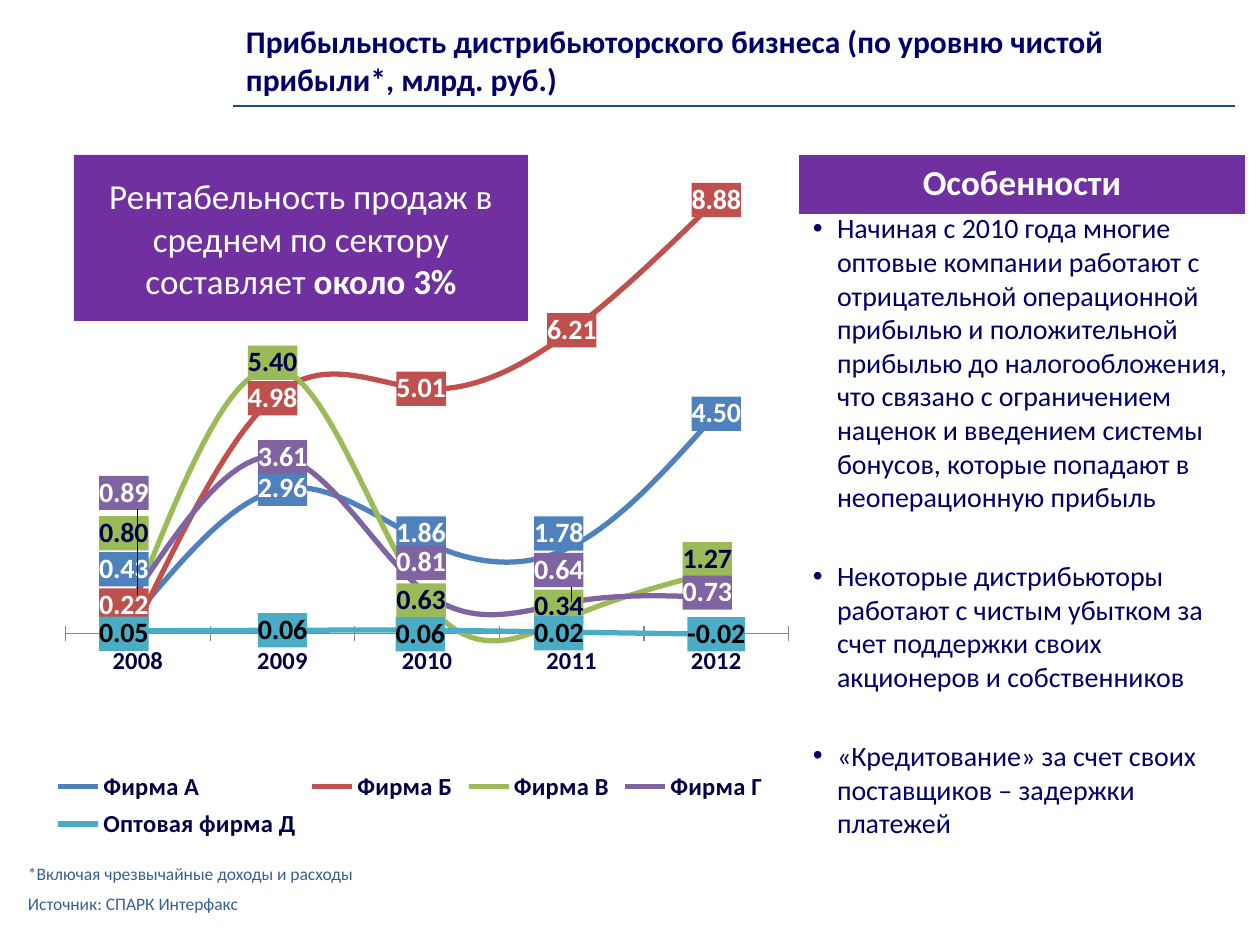
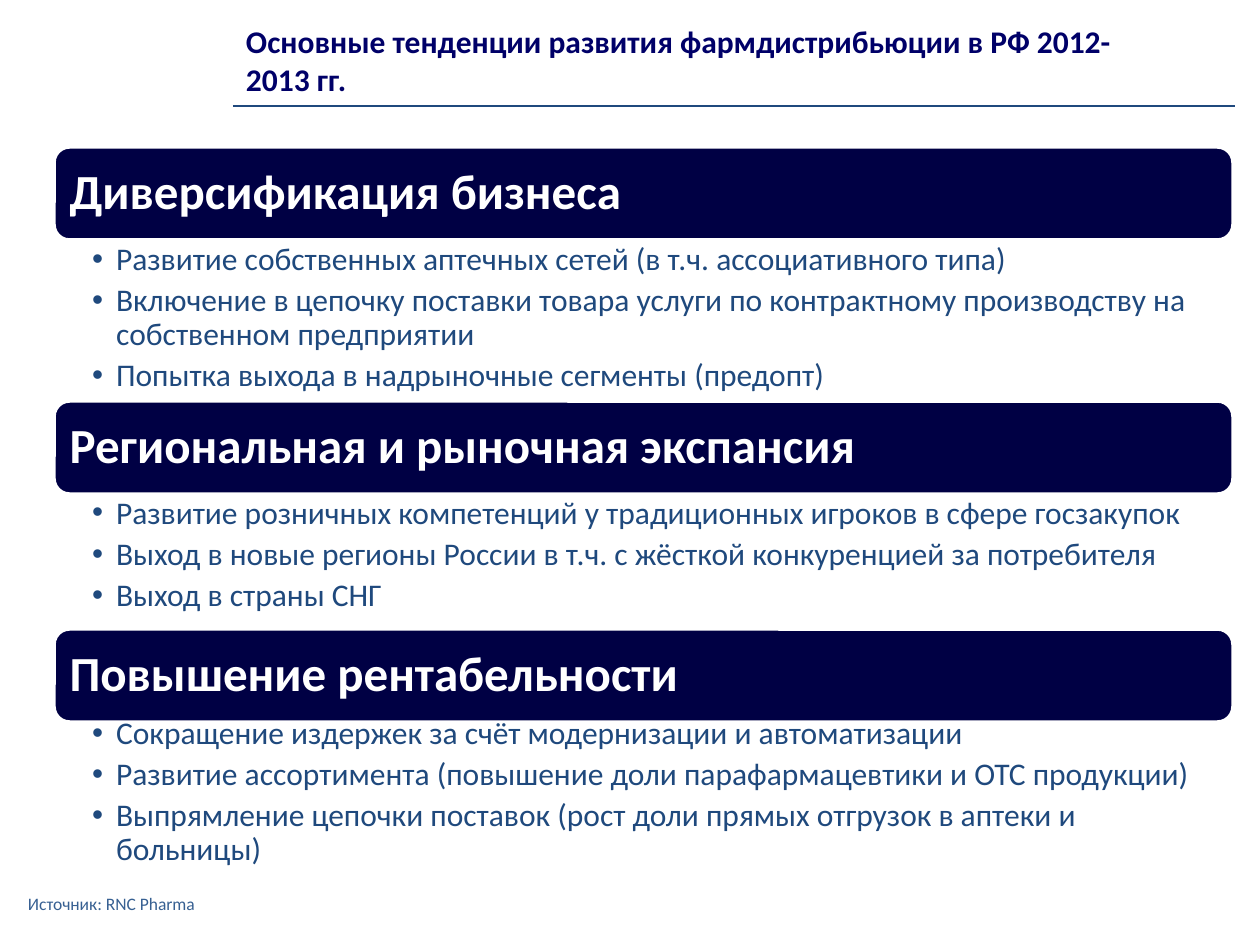
import copy
import collections

import lxml.etree
import pptx
import pptx.chart.data
import pptx.dml.color
import pptx.enum.chart
import pptx.enum.shapes
import pptx.enum.text
import pptx.oxml
import pptx.oxml.ns
import pptx.util

PX = 914400 / 126
FONT = "Calibri"
WHITE, NAVY, TITLE_BLUE, PANEL_BLUE = "FFFFFF", "000044", "000068", "000066"
RULE_BLUE, NOTE_BLUE, PURPLE, AXIS_GREY = "1F497D", "376092", "7030A0", "878787"
MIDDLE = pptx.enum.text.MSO_ANCHOR.MIDDLE
CENTER = pptx.enum.text.PP_ALIGN.CENTER
SHAPES = pptx.enum.shapes.MSO_SHAPE
qn = pptx.oxml.ns.qn

Box = collections.namedtuple("Box", "left top width height")
Line = collections.namedtuple("Line", "name values colour label_colour shifts")

YEARS = ["2008", "2009", "2010", "2011", "2012"]
# shifts: year index -> label offset from its point, in px
PROFITS = [
    Line("Фирма А", (0.43, 2.96, 1.86, 1.78, 4.5), "4F81BD", WHITE,
         {0: (-14, -43), 2: (-6, -9), 3: (-13, -13)}),
    Line("Фирма Б", (0.22, 4.98, 5.01, 6.21, 8.88), "C0504D", WHITE,
         {0: (-14, -17), 1: (-10, 8), 2: (-6, 0)}),
    Line("Фирма В", (0.8, 5.4, 0.63, 0.34, 1.27), "9BBB59", NAVY,
         {0: (-14, -61), 1: (-10, -7), 2: (-6, -2), 3: (-13, -10), 4: (-9, -12)}),
    Line("Фирма Г", (0.89, 3.61, 0.81, 0.64, 0.73), "8064A2", WHITE,
         {0: (-14, -97), 2: (-6, -31), 3: (-13, -32), 4: (-9, -5)}),
    Line("Оптовая фирма Д", (0.05, 0.06, 0.06, 0.02, -0.02), "4BACC6", "000000",
         {0: (-14, 3), 2: (-7, 4), 3: (-13, 1)}),
]
FEATURES = [
    "Начиная с 2010 года многие оптовые компании работают с отрицательной "
    "операционной прибылью и положительной прибылью до налогообложения, что "
    "связано с ограничением наценок и введением системы бонусов, которые "
    "попадают в неоперационную прибыль",
    "Некоторые дистрибьюторы работают с чистым убытком за счет поддержки своих "
    "акционеров и собственников",
    "«Кредитование» за счет своих поставщиков – задержки платежей",
]
# heading, top, top of the list, height of the list, points
TRENDS = [
    ("Диверсификация бизнеса", 147, 239, 161, [
        "Развитие собственных аптечных сетей (в т.ч. ассоциативного типа)",
        "Включение в цепочку поставки товара услуги по контрактному производству "
        "на собственном предприятии",
        "Попытка выхода в надрыночные сегменты (предопт)"]),
    ("Региональная и рыночная экспансия", 401, 493, 129, [
        "Развитие розничных компетенций у традиционных игроков в сфере госзакупок",
        "Выход в новые регионы России в т.ч. с жёсткой конкуренцией за потребителя",
        "Выход в страны СНГ"]),
    ("Повышение рентабельности", 629, 713, 164, [
        "Сокращение издержек за счёт модернизации и автоматизации",
        "Развитие ассортимента (повышение доли парафармацевтики и ОТС продукции)",
        "Выпрямление цепочки поставок (рост доли прямых отгрузок в аптеки и больницы)"]),
]


def px(length):
    return round(length * PX)


def rgb(colour):
    return pptx.dml.color.RGBColor.from_string(colour)


def set_font(font, size, colour, bold=False):
    font.name, font.size, font.bold = FONT, pptx.util.Pt(size), bold
    font.color.rgb = rgb(colour)


def add_bullet(para, indent):
    properties = para._p.get_or_add_pPr()
    properties.set("marL", str(px(indent)))
    properties.set("indent", str(-px(indent)))
    lxml.etree.SubElement(properties, qn("a:buFont"), typeface="Arial")
    lxml.etree.SubElement(properties, qn("a:buChar"), char="•")


def write(shape, paragraphs, size, colour, bold=False, align=None, anchor=None,
          insets=(13, 6, 13, 6), bullet=False, spacing=None, after=0):
    """Fill a shape; a paragraph is a string or a list of (text, bold) spans."""
    frame = shape.text_frame
    frame.word_wrap = True
    frame.vertical_anchor = anchor or pptx.enum.text.MSO_ANCHOR.TOP
    (frame.margin_left, frame.margin_top,
     frame.margin_right, frame.margin_bottom) = map(px, insets)
    for index, spans in enumerate(paragraphs):
        para = frame.add_paragraph() if index else frame.paragraphs[0]
        para.alignment = align or pptx.enum.text.PP_ALIGN.LEFT
        if spacing:
            para.line_spacing = spacing
        para.space_after = pptx.util.Pt(after)
        if bullet:
            add_bullet(para, 24)
        for text, span_bold in [(spans, bold)] if isinstance(spans, str) else spans:
            span = para.add_run()
            span.text = text
            set_font(span.font, size, colour, span_bold)


def add_text(page, box, paragraphs, size, colour, **options):
    shape = page.shapes.add_textbox(*map(px, box))
    write(shape, paragraphs, size, colour, **options)


def add_filled(page, kind, box, fill):
    shape = page.shapes.add_shape(kind, *map(px, box))
    shape.shadow.inherit = False
    shape.fill.solid()
    shape.fill.fore_color.rgb = rgb(fill)
    shape.line.fill.background()
    return shape


def add_page(deck, title, notes):
    """Start a page with its title, rule and notes stacked up from the bottom."""
    page = deck.slides.add_slide(deck.slide_layouts[6])
    rule = page.shapes.add_connector(
        pptx.enum.shapes.MSO_CONNECTOR.STRAIGHT, px(233), px(106), px(1235), px(106))
    rule.line.color.rgb = rgb(RULE_BLUE)
    rule.line.width = pptx.util.Pt(1.5)
    lxml.etree.SubElement(rule._element.spPr, qn("a:effectLst"))
    add_text(page, Box(233, 16, 903, 89), [title], 18, TITLE_BLUE, bold=True)
    for index, note in enumerate(notes):
        add_text(page, Box(15, 879 - 30 * index, 399, 50), [note], 10, NOTE_BLUE,
                 anchor=MIDDLE)
    return page


def manual_layout(**values):
    layout = pptx.oxml.parse_xml(f"<c:layout {pptx.oxml.ns.nsdecls('c')}><c:manualLayout/></c:layout>")
    for name, value in values.items():
        lxml.etree.SubElement(layout[0], qn(f"c:{name}"), val=str(value))
    return layout


def label_series(series, line, box):
    labels = series.data_labels
    labels.show_value = True
    labels.number_format, labels.number_format_is_linked = "#,##0.00", False
    labels.position = pptx.enum.chart.XL_LABEL_POSITION.CENTER
    set_font(labels.font, 16, line.label_colour, True)
    element = series._element.find(qn("c:dLbls"))
    fill = pptx.oxml.parse_xml(
        f"<c:spPr {pptx.oxml.ns.nsdecls('c', 'a')}><a:solidFill>"
        f'<a:srgbClr val="{line.colour}"/></a:solidFill></c:spPr>')
    element.find(qn("c:txPr")).addprevious(fill)
    shared = [element.find(qn(f"c:{tag}")) for tag in ("txPr", "spPr", "numFmt")]
    for index, (right, down) in line.shifts.items():
        series.points[index].data_label.position = pptx.enum.chart.XL_LABEL_POSITION.CENTER
        label = next(item for item in element.findall(qn("c:dLbl"))
                     if item.find(qn("c:idx")).get("val") == str(index))
        for old in label.findall(qn("c:spPr")) + label.findall(qn("c:txPr")):
            label.remove(old)
        start = label.find(qn("c:idx"))
        for part in shared:
            start.addnext(copy.deepcopy(part))
        start.addnext(manual_layout(x=round(right / box.width, 4),
                                    y=round(down / box.height, 4)))


def add_profit_chart(page, box):
    data = pptx.chart.data.CategoryChartData()
    data.categories = YEARS
    for line in PROFITS:
        data.add_series(line.name, line.values)
    chart = page.shapes.add_chart(
        pptx.enum.chart.XL_CHART_TYPE.LINE, *map(px, box), data).chart
    set_font(chart.font, 10, "000000")
    chart.has_title = False
    for series, line in zip(chart.plots[0].series, PROFITS):
        series.smooth = True
        series.format.line.color.rgb = rgb(line.colour)
        series.format.line.width = pptx.util.Pt(3)
        series.marker.style = pptx.enum.chart.XL_MARKER_STYLE.NONE
        label_series(series, line, box)

    values = chart.value_axis
    values.minimum_scale, values.maximum_scale = -2, 10
    values.has_major_gridlines = False
    values.visible = False
    years = chart.category_axis
    years.major_tick_mark = pptx.enum.chart.XL_TICK_MARK.CROSS
    years.format.line.color.rgb = rgb(AXIS_GREY)
    set_font(years.tick_labels.font, 14, NAVY, True)

    chart.has_legend = True
    chart.legend.position = pptx.enum.chart.XL_LEGEND_POSITION.BOTTOM
    chart.legend.include_in_layout = False
    set_font(chart.legend.font, 14, NAVY, True)
    legend = chart.legend._element
    for old in legend.findall(qn("c:layout")):
        legend.remove(old)
    legend.find(qn("c:legendPos")).addnext(
        manual_layout(xMode="edge", yMode="edge", x=0.005, y=0.845, w=0.6, h=0.11))
    plot = chart._chartSpace.find(".//" + qn("c:plotArea"))
    for old in plot.findall(qn("c:layout")):
        plot.remove(old)
    plot.insert(0, manual_layout(layoutTarget="inner", xMode="edge", yMode="edge",
                                 x=0.018, y=0.014, w=0.602, h=0.786))


def add_features_panel(page, box):
    heading = add_filled(page, SHAPES.RECTANGLE, box._replace(height=59), PURPLE)
    write(heading, ["Особенности"], 20, WHITE, bold=True, align=CENTER,
          anchor=MIDDLE, insets=(10, 10, 10, 10), spacing=0.9)
    body = box._replace(top=box.top + 53, height=box.height - 53)
    add_text(page, body, FEATURES, 16, PANEL_BLUE, bullet=True, after=26,
             insets=(14, 3, 15, 3))


def add_trend(page, box, heading, list_box, points):
    band = add_filled(page, SHAPES.ROUNDED_RECTANGLE, box, NAVY)
    band.line.color.rgb = rgb(WHITE)
    band.line.width = pptx.util.Pt(2)
    write(band, [heading], 28, WHITE, bold=True, anchor=MIDDLE,
          insets=(11, 11, 11, 11), spacing=0.9)
    add_text(page, list_box, points, 18, RULE_BLUE, bullet=True, spacing=0.9,
             after=4, insets=(38, 4, 18, 4))


def build_profit_page(deck):
    page = add_page(
        deck, "Прибыльность дистрибьюторского бизнеса (по уровню чистой прибыли*, млрд. руб.)",
        ["Источник: СПАРК Интерфакс", "*Включая чрезвычайные доходы и расходы"])
    add_profit_chart(page, Box(44, 135, 1201, 745))
    margin = add_filled(page, SHAPES.RECTANGLE, Box(74, 155, 454, 166), PURPLE)
    write(margin, [[("Рентабельность продаж в среднем по сектору составляет ", False),
                    ("около 3%", True)]], 20, WHITE, align=CENTER, anchor=MIDDLE)
    add_features_panel(page, Box(799, 155, 446, 629))


def build_trends_page(deck):
    page = add_page(deck, "Основные тенденции развития фармдистрибьюции в РФ 2012-2013 гг.",
                    ["Источник: RNC Pharma"])
    for heading, top, list_top, list_height, points in TRENDS:
        band = Box(54, top, 1179, 93)
        add_trend(page, band, heading,
                  band._replace(top=list_top, height=list_height), points)


def main():
    deck = pptx.Presentation()
    deck.slide_width, deck.slide_height = px(1260), px(945)
    build_profit_page(deck)
    build_trends_page(deck)
    deck.save("out.pptx")


if __name__ == "__main__":
    main()
